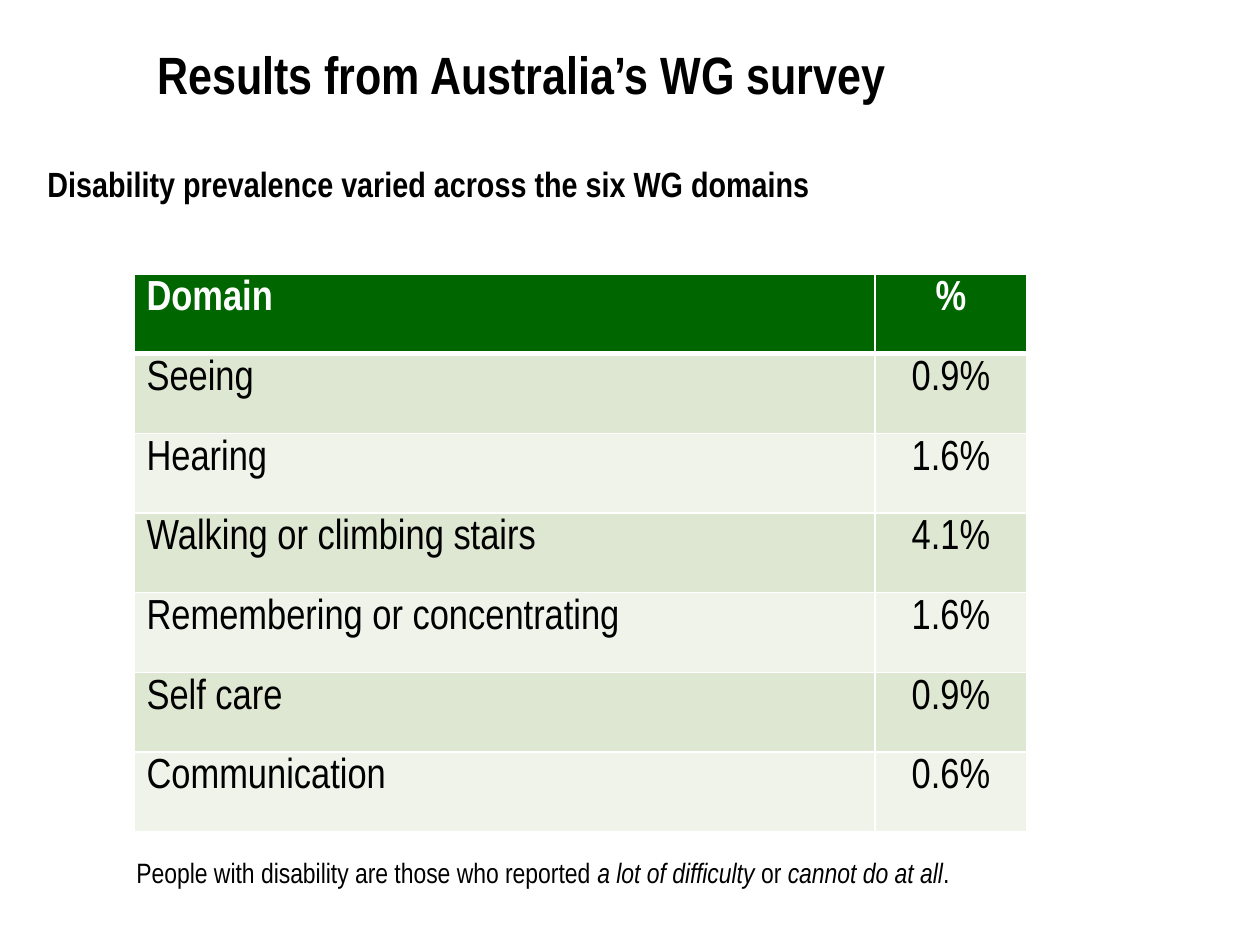
from lxml.etree import SubElement
from pptx import Presentation
from pptx.dml.color import RGBColor
from pptx.enum.text import MSO_AUTO_SIZE as AutoSize, PP_ALIGN as Align
from pptx.oxml.ns import qn
from pptx.util import Emu, Pt

PX_PER_INCH = 126
BLACK, WHITE, GREEN = "000000", "FFFFFF", "006600"
BANDS = ["DEE7D1", "EFF3EA"]
ROWS = [
    ("Domain", "%"),
    ("Seeing", "0.9%"),
    ("Hearing", "1.6%"),
    ("Walking or climbing stairs", "4.1%"),
    ("Remembering or concentrating", "1.6%"),
    ("Self care", "0.9%"),
    ("Communication", "0.6%"),
]


def px(length):
    return Emu(round(length * 914400 / PX_PER_INCH))


def color(value):
    return RGBColor.from_string(value)


class SlideBuilder:
    font_name = "Arial Narrow"

    def __init__(self, slide):
        self.slide = slide

    def style(self, run, size, text_color=BLACK, bold=False, italic=False):
        font = run.font
        font.name = self.font_name
        font.size = Pt(size)
        font.bold = bold
        font.italic = italic
        font.color.rgb = color(text_color)

    def text(self, left, top, width, height, pieces, size, bold=False, wrap=True):
        shape = self.slide.shapes.add_textbox(px(left), px(top), px(width), px(height))
        frame = shape.text_frame
        frame.word_wrap = wrap
        frame.auto_size = AutoSize.SHAPE_TO_FIT_TEXT
        for content, italic in pieces:
            run = frame.paragraphs[0].add_run()
            run.text = content
            self.style(run, size, bold=bold, italic=italic)

    def border(self, cell, side, width):
        line = SubElement(cell._tc.get_or_add_tcPr(), qn(f"a:ln{side}"), w=str(Pt(width)))
        fill = SubElement(line, qn("a:solidFill"))
        SubElement(fill, qn("a:srgbClr"), val=WHITE)

    def cell(self, cell, content, fill, text_color, bold, align, edges):
        for side, width in edges.items():
            self.border(cell, side, width)
        cell.fill.solid()
        cell.fill.fore_color.rgb = color(fill)
        cell.text_frame.text = content
        paragraph = cell.text_frame.paragraphs[0]
        paragraph.alignment = align
        self.style(paragraph.runs[0], 24, text_color, bold)

    def table(self, left, top, widths, height, rows):
        frame = self.slide.shapes.add_table(
            len(rows), len(widths), px(left), px(top), px(sum(widths)), px(height))
        table = frame.table
        for column, width in zip(table.columns, widths):
            column.width = px(width)
        for index, values in enumerate(rows):
            header = index == 0
            fill = GREEN if header else BANDS[(index - 1) % 2]
            edges = {"L": 1, "R": 1, "T": 3 if index == 1 else 1, "B": 3 if header else 1}
            for column, (value, align) in enumerate(zip(values, (Align.LEFT, Align.CENTER))):
                self.cell(table.cell(index, column), value, fill,
                          WHITE if header else BLACK, header, align, edges)


def main():
    presentation = Presentation()
    presentation.slide_width = px(1260)
    presentation.slide_height = px(945)
    builder = SlideBuilder(presentation.slides.add_slide(presentation.slide_layouts[6]))

    builder.table(134, 274, [741, 152], 558, ROWS)
    builder.text(124, 849, 903, 47, [
        ("People with disability are those who reported ", False),
        ("a lot of difficulty", True),
        (" or ", False),
        ("cannot do at all", True),
        (".", False),
    ], 16)
    builder.text(35, 156, 793, 55,
                 [("Disability prevalence varied across the six WG domains", False)],
                 20, bold=True, wrap=False)
    builder.text(145, 36, 1022, 77, [("Results from Australia’s WG survey", False)],
                 30, bold=True)

    presentation.save("out.pptx")


if __name__ == "__main__":
    main()
